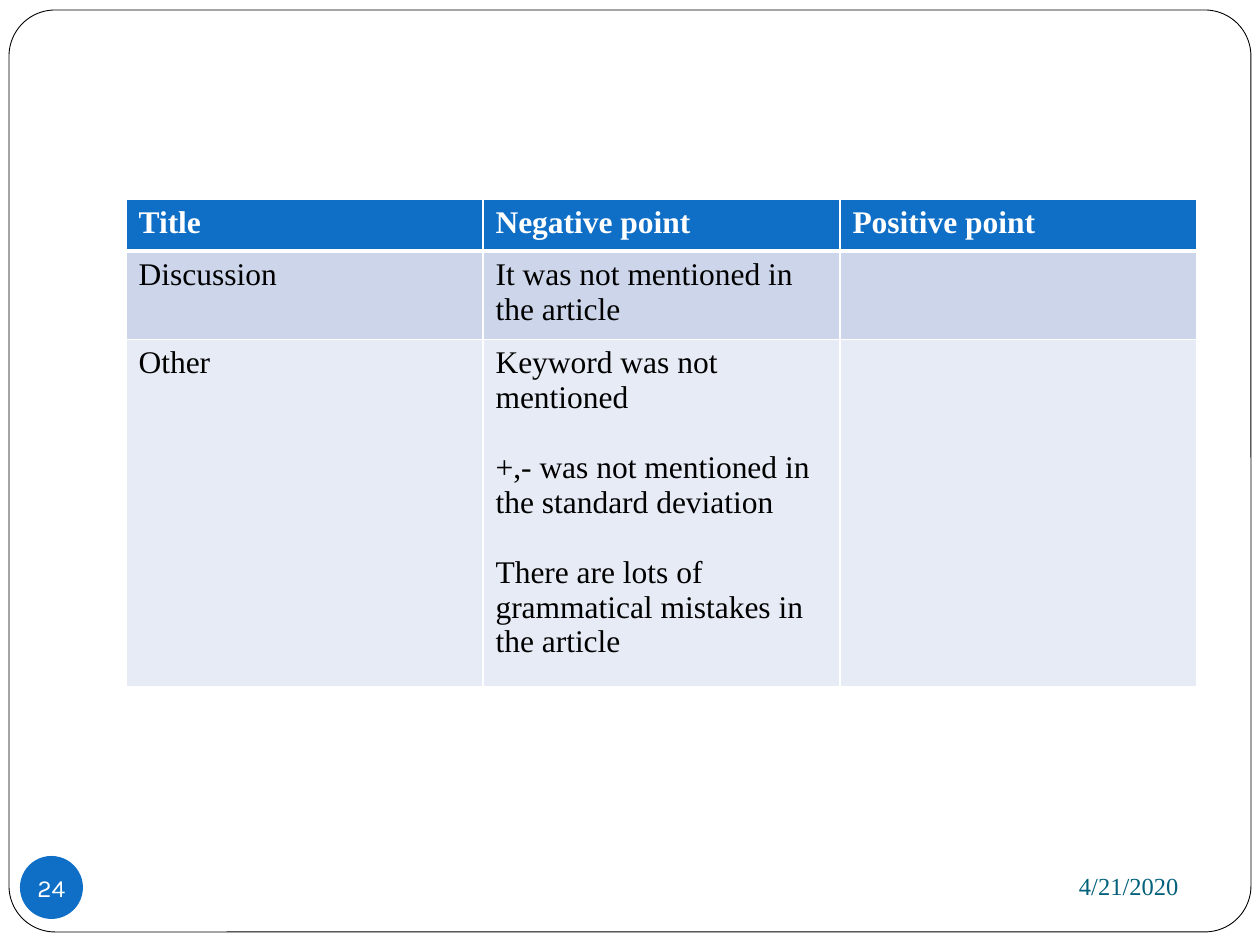
from dataclasses import dataclass

from lxml.etree import SubElement
from pptx import Presentation
from pptx.dml.color import RGBColor
from pptx.enum.shapes import MSO_SHAPE
from pptx.enum.text import MSO_ANCHOR, PP_ALIGN
from pptx.oxml.ns import qn
from pptx.util import Emu, Pt

WHITE = RGBColor(0xFF, 0xFF, 0xFF)
BLACK = RGBColor(0x00, 0x00, 0x00)
BLUE = RGBColor(0x0F, 0x6F, 0xC6)
TEAL = RGBColor(0x04, 0x61, 0x7B)
BAND_DARK = RGBColor(0xCC, 0xD5, 0xEA)
BAND_LIGHT = RGBColor(0xE7, 0xEB, 0xF5)
SERIF = "Times New Roman"
SANS = "Karla"
COL_WIDTH = 357


@dataclass
class Row:
    height: int
    fill: RGBColor
    color: RGBColor
    bold: bool
    bottom_pt: int
    cells: list[list[str]]


ROWS = [
    Row(52, BLUE, WHITE, True, 3,
        [["Title"], ["Negative point"], ["Positive point"]]),
    Row(82, BAND_DARK, BLACK, False, 1,
        [["Discussion"], ["It was not mentioned in the article"], []]),
    Row(326, BAND_LIGHT, BLACK, False, 1,
        [["Other"],
         ["Keyword was not mentioned",
          "+,- was not mentioned in the standard deviation",
          "There are lots of grammatical mistakes in the article"],
         []]),
]


def px(n: int) -> Emu:
    return Emu(round(n * 914400 / 126))


def style(p, size: int, name: str, color: RGBColor, bold: bool = False) -> None:
    p.font.size = Pt(size)
    p.font.name = name
    p.font.color.rgb = color
    p.font.bold = bold


def add_shape(s, kind, x: int, y: int, w: int, h: int, fill: RGBColor):
    sp = s.shapes.add_shape(kind, px(x), px(y), px(w), px(h))
    sp.shadow.inherit = False
    sp.fill.solid()
    sp.fill.fore_color.rgb = fill
    return sp


def set_borders(cell, bottom_pt: int, top_pt: int) -> None:
    tc_pr = cell._tc.get_or_add_tcPr()
    widths = {"a:lnL": 1, "a:lnR": 1, "a:lnT": top_pt, "a:lnB": bottom_pt}
    for i, (tag, width) in enumerate(widths.items()):
        ln = SubElement(tc_pr, qn(tag), w=str(Pt(width)))
        fill = SubElement(ln, qn("a:solidFill"))
        SubElement(fill, qn("a:srgbClr"), val=str(WHITE))
        tc_pr.insert(i, ln)


def fill_cell(cell, row: Row, lines: list[str], top_pt: int) -> None:
    cell.fill.solid()
    cell.fill.fore_color.rgb = row.fill
    set_borders(cell, row.bottom_pt, top_pt)
    tf = cell.text_frame
    for i, line in enumerate(lines):
        p = tf.add_paragraph() if i else tf.paragraphs[0]
        p.text = line
        p.space_before = Pt(20 if i else 0)
        style(p, 18, SERIF, row.color, row.bold)


def add_review_table(s, x: int, y: int, rows: list[Row]) -> None:
    n_cols = len(rows[0].cells)
    height = sum(row.height for row in rows)
    table = s.shapes.add_table(len(rows), n_cols, px(x), px(y),
                               px(COL_WIDTH * n_cols), px(height)).table
    for col in table.columns:
        col.width = px(COL_WIDTH)
    top_pt = 1
    for r, row in enumerate(rows):
        table.rows[r].height = px(row.height)
        for c, lines in enumerate(row.cells):
            fill_cell(table.cell(r, c), row, lines, top_pt)
        top_pt = row.bottom_pt


def main() -> None:
    prs = Presentation()
    prs.slide_width, prs.slide_height = px(1260), px(945)
    s = prs.slides.add_slide(prs.slide_layouts[6])

    # Rounded frame
    frame = add_shape(s, MSO_SHAPE.ROUNDED_RECTANGLE, 9, 10, 1242, 922, WHITE)
    frame.adjustments[0] = 0.05
    frame.line.color.rgb = BLACK
    frame.line.width = Pt(0.5)

    # Date
    tf = s.shapes.add_textbox(px(850), px(853), px(341), px(66)).text_frame
    tf.word_wrap = True
    tf.vertical_anchor = MSO_ANCHOR.MIDDLE
    p = tf.paragraphs[0]
    p.text = "4/21/2020"
    p.alignment = PP_ALIGN.RIGHT
    style(p, 14, SERIF, TEAL)

    # Slide number
    badge = add_shape(s, MSO_SHAPE.OVAL, 20, 856, 63, 63, BLUE)
    badge.line.fill.background()
    tf = badge.text_frame
    tf.margin_left = tf.margin_right = tf.margin_top = tf.margin_bottom = 0
    tf.word_wrap = False
    tf.vertical_anchor = MSO_ANCHOR.MIDDLE
    p = tf.paragraphs[0]
    p.text = "24"
    p.alignment = PP_ALIGN.CENTER
    style(p, 14, SANS, WHITE)

    # Review table
    add_review_table(s, 126, 199, ROWS)

    prs.save("out.pptx")


if __name__ == "__main__":
    main()
